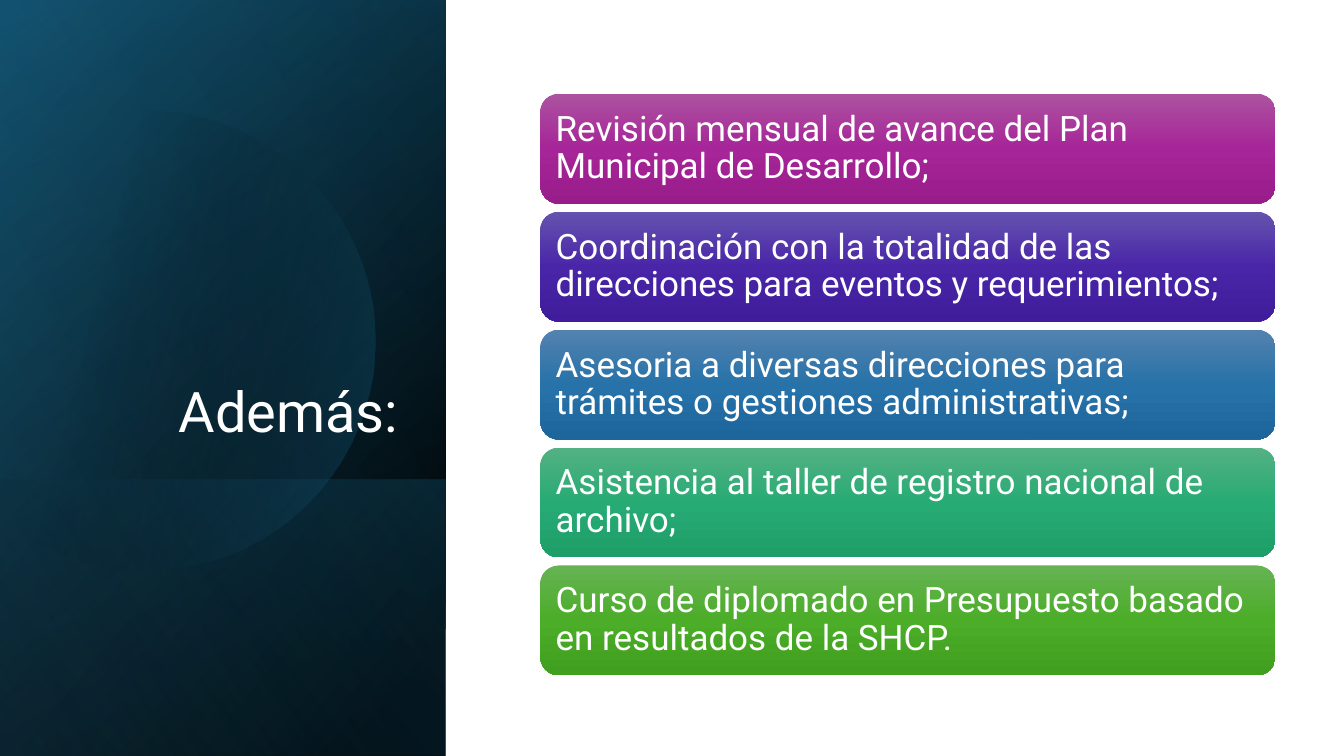
"""Builds a slide with a dark title panel and five coloured cards."""
import math

from pptx import Presentation, util as u
from pptx.dml import color
from pptx.enum import shapes, text
from pptx.oxml import parse_xml
from pptx.oxml.ns import nsdecls, qn


class SlideBuilder:
    font = "Roboto"
    white = "FFFFFF"

    def __init__(self, deck):
        self.slide = deck.slides.add_slide(deck.slide_layouts[5])
        self.shapes = self.slide.shapes

    def rgb(self, value):
        return color.RGBColor.from_string(value)

    def gradient(self, shape, stops, angle):
        shape.shadow.inherit = False
        shape.line.fill.background()
        shape.fill.gradient()
        marks = "".join(
            f'<a:gs pos="{place * 1000}"><a:srgbClr val="{self.rgb(value)}">'
            f'<a:alpha val="{opacity * 1000}"/></a:srgbClr></a:gs>'
            for place, value, opacity in stops
        )
        grad = parse_xml(
            f'<a:gradFill {nsdecls("a")} rotWithShape="1"><a:gsLst>{marks}</a:gsLst>'
            f'<a:lin ang="{angle * 60000}" scaled="0"/></a:gradFill>'
        )
        props = shape._element.spPr
        props.replace(props.find(qn("a:gradFill")), grad)

    def block(self, kind, frame):
        return self.shapes.add_shape(kind, *map(u.Inches, frame))

    def panel(self, frame, stops, angle):
        panel = self.block(shapes.MSO_SHAPE.RECTANGLE, frame)
        panel.rotation = 90
        panel._element.spPr.xfrm.set("flipH", "1")
        self.gradient(panel, stops, angle)

    def disc(self, center_x, center_y, radius, stops, angle):
        limit = math.acos(-center_x / radius)
        steps = 120
        turns = [limit * (2 * step / steps - 1) for step in range(steps + 1)]
        points = [
            (u.Inches(center_x + radius * math.cos(turn)),
             u.Inches(center_y + radius * math.sin(turn)))
            for turn in turns
        ]
        outline = self.shapes.build_freeform(*points[0])
        outline.add_line_segments(points[1:])
        self.gradient(outline.convert_to_shape(), stops, angle)

    def set_words(self, shape, words, size, align, anchor):
        frame = shape.text_frame
        frame.text = words
        frame.word_wrap = True
        frame.auto_size = text.MSO_AUTO_SIZE.NONE
        frame.vertical_anchor = anchor
        para = frame.paragraphs[0]
        para.alignment = align
        para.line_spacing = 0.9
        span = para.runs[0].font
        span.name = self.font
        span.size = u.Pt(size)
        span.color.rgb = self.rgb(self.white)

    def title(self, words, frame):
        title = self.shapes.title
        title.left, title.top, title.width, title.height = map(u.Inches, frame)
        self.shapes._spTree.append(title._element)
        self.set_words(title, words, 40, text.PP_ALIGN.RIGHT, text.MSO_ANCHOR.BOTTOM)

    def card(self, words, frame, colours):
        card = self.block(shapes.MSO_SHAPE.ROUNDED_RECTANGLE, frame)
        stops = [(place, value, 100) for place, value in zip((0, 50, 100), colours)]
        self.gradient(card, stops, 90)
        box = card.text_frame
        box.margin_left = box.margin_right = u.Inches(0.1)
        box.margin_top = box.margin_bottom = u.Inches(0.1)
        self.set_words(card, words, 25, text.PP_ALIGN.LEFT, text.MSO_ANCHOR.MIDDLE)


CARDS = [
    ("Revisión mensual de avance del Plan Municipal de Desarrollo;",
     ("AC53A0", "A62598", "991C8B")),
    ("Coordinación con la totalidad de las direcciones para eventos y requerimientos;",
     ("6553AE", "4926A8", "3E1C9A")),
    ("Asesoria a diversas direcciones para trámites o gestiones administrativas;",
     ("5382AF", "2772A9", "1D669C")),
    ("Asistencia al taller de registro nacional de archivo;",
     ("54B183", "27AB74", "1E9E68")),
    ("Curso de diplomado en Presupuesto basado en resultados de la SHCP.",
     ("66B354", "4BAD28", "409F1E")),
]


def main():
    deck = Presentation()
    deck.slide_width, deck.slide_height = u.Inches(13.33), u.Inches(7.5)
    page = SlideBuilder(deck)

    side = (-1.54, 1.54, 7.5, 4.42)
    page.panel(side, [(8, "000000", 100), (100, "104862", 100)], 50)
    page.panel(side, [(0, "000000", 0), (99, "156082", 46)], 30)
    page.panel((0.84, 3.92, 2.74, 4.42), [(2, "156082", 29), (100, "000000", 30)], 130)
    page.disc(1.44, 3.38, 2.28, [(29, "000000", 0), (100, "156082", 43)], 14)
    page.panel(side, [(0, "000000", 0), (99, "46B1E1", 11)], 120)

    page.title("Además:", (0.64, 1.84, 3.41, 2.62))
    top, height, gap = 0.93, 1.09, 0.08
    for row, (words, colours) in enumerate(CARDS):
        page.card(words, (5.36, top + row * (height + gap), 7.29, height), colours)

    deck.save("out.pptx")


if __name__ == "__main__":
    main()
